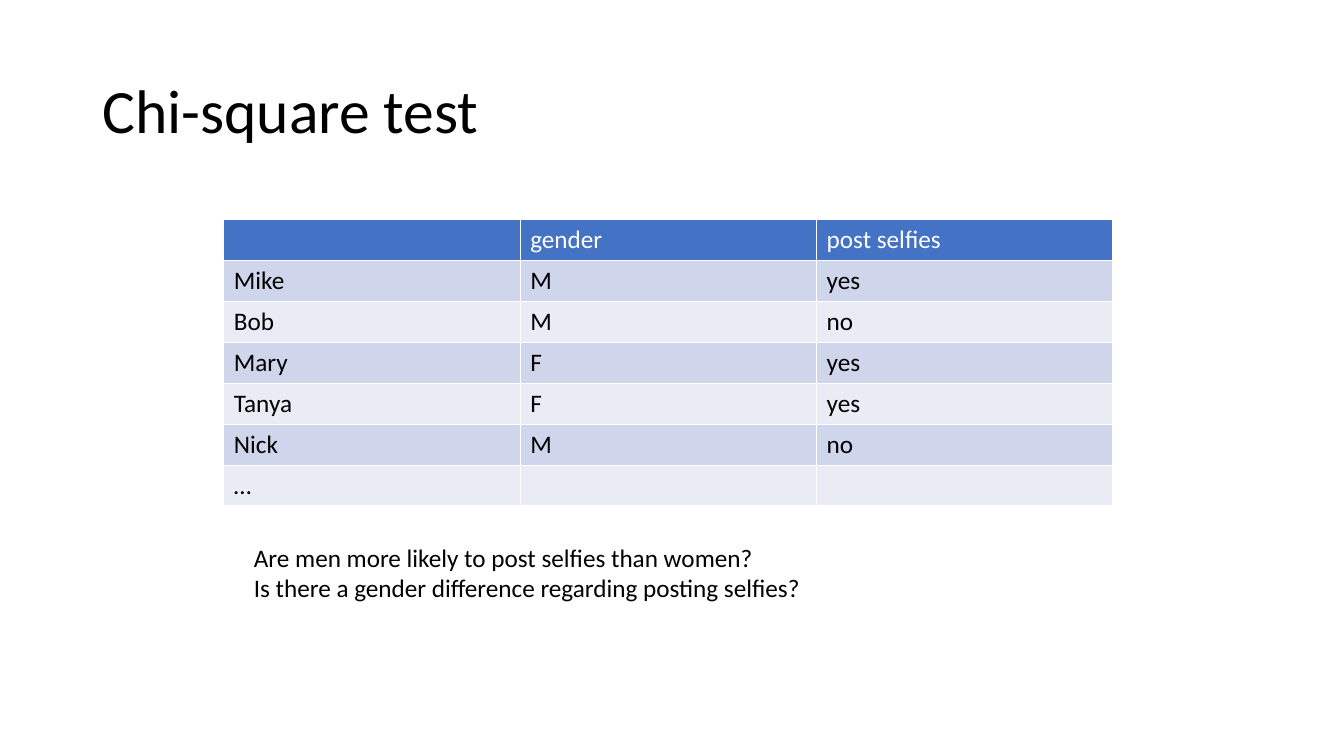
from dataclasses import dataclass

from pptx import Presentation
from pptx.dml.color import RGBColor
from pptx.enum.text import MSO_ANCHOR
from pptx.util import Cm, Pt

MIDDLE, TOP = MSO_ANCHOR.MIDDLE, MSO_ANCHOR.TOP


@dataclass(frozen=True)
class Theme:
    font: str = "Calibri"
    title_size: int = 44
    body_size: int = 18
    text: str = "000000"
    header_text: str = "FFFFFF"
    header_fill: str = "4472C4"
    bands: tuple = ("E9EBF5", "CFD5EA")


theme = Theme()


def style_text(tf, size, color):
    for p in tf.paragraphs:
        for r in p.runs:
            r.font.name = theme.font
            r.font.size = Pt(size)
            r.font.bold = False
            r.font.color.rgb = RGBColor.from_string(color)


def add_text(s, text, box, size, anchor):
    tf = s.shapes.add_textbox(*map(Cm, box)).text_frame
    tf.word_wrap = True
    tf.vertical_anchor = anchor
    tf.text = text
    style_text(tf, size, theme.text)
    return tf


prs = Presentation()
prs.slide_width, prs.slide_height = Cm(33.87), Cm(19.05)
s = prs.slides.add_slide(prs.slide_layouts[6])

# Title
tf = add_text(s, "Chi-square test", (2.33, 1.01, 29.21, 3.68), theme.title_size, MIDDLE)
tf.paragraphs[0].line_spacing = 0.9

# Survey table
survey = [
    ("", "gender", "post selfies"),
    ("Mike", "M", "yes"),
    ("Bob", "M", "no"),
    ("Mary", "F", "yes"),
    ("Tanya", "F", "yes"),
    ("Nick", "M", "no"),
    ("…", "", ""),
]
col_width, row_height = 7.47, 1.03
table = s.shapes.add_table(
    len(survey), 3, Cm(5.64), Cm(5.54), Cm(3 * col_width), Cm(len(survey) * row_height)
).table
for i, record in enumerate(survey):
    fill = theme.bands[i % 2] if i else theme.header_fill
    color = theme.text if i else theme.header_text
    for j, value in enumerate(record):
        cell = table.cell(i, j)
        cell.fill.solid()
        cell.fill.fore_color.rgb = RGBColor.from_string(fill)
        if value:
            cell.text_frame.text = value
            style_text(cell.text_frame, theme.body_size, color)

# Research questions
questions = (
    "Are men more likely to post selfies than women?\n"
    "Is there a gender difference regarding posting selfies?"
)
add_text(s, questions, (6.15, 13.54, 18.85, 1.8), theme.body_size, TOP)

prs.save("out.pptx")
